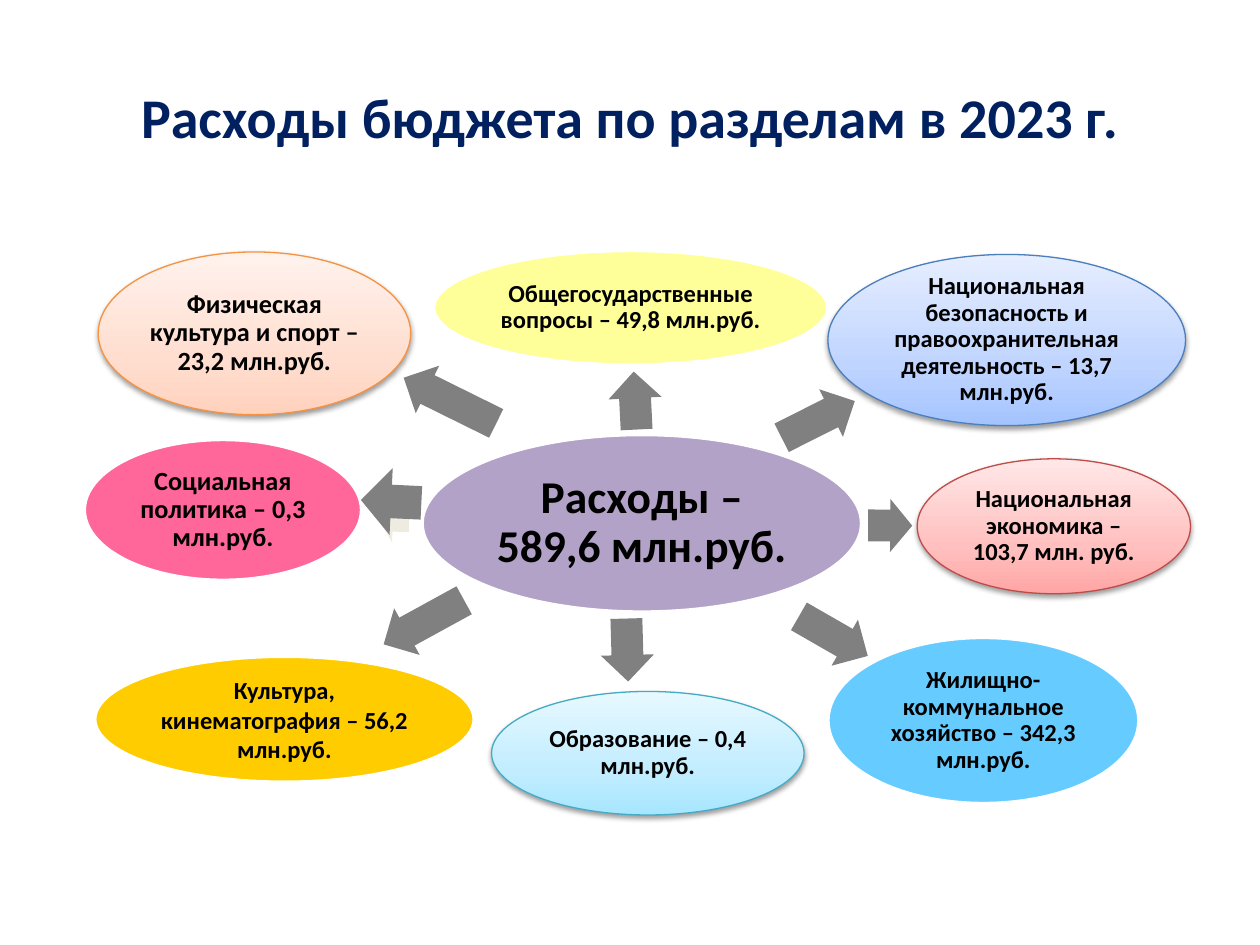
from lxml import etree
from pptx import Presentation, util as u
from pptx.dml.color import RGBColor
from pptx.enum import shapes, text
from pptx.oxml.ns import nsdecls

GREY = "808080"
SHADOW = """<a:effectLst %s><a:outerShdw blurRad="39370" dist="20320" dir="5400000"
 rotWithShape="0"><a:srgbClr val="000000"><a:alpha val="38000"/></a:srgbClr>
</a:outerShdw></a:effectLst>""" % nsdecls("a")


def rgb(code):
    return RGBColor.from_string(code)


def fade(shape, stops):
    """Fill with three colours that run from the bottom to the top."""
    marks = "".join(
        f'<a:gs pos="{pos}"><a:srgbClr val="{code}"/></a:gs>'
        for pos, code in zip((0, 35000, 100000), stops))
    grad = etree.fromstring(
        f'<a:gradFill {nsdecls("a")} rotWithShape="1"><a:gsLst>{marks}</a:gsLst>'
        '<a:lin ang="16200000" scaled="0"/></a:gradFill>')
    shape.fill.background()
    props = shape._element.spPr
    props.replace(props.find("{*}noFill"), grad)


class Deck:
    font = "Calibri"

    def __init__(self):
        self.file = Presentation()
        self.file.slide_width, self.file.slide_height = u.Cm(25.4), u.Cm(19.05)
        self.slide = self.file.slides.add_slide(self.file.slide_layouts[5])

    def label(self, frame, words, size, color, space=None):
        frame.text = words
        frame.word_wrap = True
        frame.vertical_anchor = text.MSO_ANCHOR.MIDDLE
        for para in frame.paragraphs:
            para.alignment = text.PP_ALIGN.CENTER
            para.line_spacing = space
            for run in para.runs:
                font = run.font
                font.name, font.size, font.bold = self.font, u.Pt(size), True
                font.color.rgb = rgb(color)

    def title(self, words, box):
        head = self.slide.shapes.title
        head.left, head.top, head.width, head.height = map(u.Cm, box)
        self.label(head.text_frame, words, 32, "002060")

    def shape(self, kind, box):
        item = self.slide.shapes.add_shape(kind, *map(u.Cm, box))
        item.shadow.inherit = False
        return item

    def oval(self, words, box, fill, edge=None, size=14, space=0.9, inset=0.05):
        """An edge colour goes with a gradient fill and a shadow."""
        item = self.shape(shapes.MSO_SHAPE.OVAL, box)
        if edge:
            fade(item, fill)
            props = item._element.spPr
            props.replace(props.find("{*}effectLst"), etree.fromstring(SHADOW))
        else:
            item.fill.solid()
            item.fill.fore_color.rgb = rgb(fill)
        item.line.color.rgb = rgb(edge or "FFFFFF")
        item.line.width = u.Pt(0.75 if edge else 2)
        frame = item.text_frame
        frame.margin_left = frame.margin_right = u.Cm(inset)
        frame.margin_top = frame.margin_bottom = u.Cm(inset)
        self.label(frame, words, size, "000000", space)

    def arrow(self, left, top, width, turn, fill=GREY, high=1.07,
              kind=shapes.MSO_SHAPE.RIGHT_ARROW, head=(0.6, 0.5)):
        item = self.shape(kind, (left, top, width, high))
        item.adjustments[0], item.adjustments[1] = head
        item.rotation = turn
        item.fill.solid()
        item.fill.fore_color.rgb = rgb(fill)
        item.line.fill.background()


# Each part: arrow (left, top, width, turn[, fill]), then the oval it points to
PARTS = [
    ((12.22, 7.54, 1.17, 267.1),
     dict(words="Общегосударственные вопросы – 49,8 млн.руб.",
          box=(8.74, 5.05, 7.95, 2.31), fill="FFFF99")),
    ((15.67, 7.92, 1.65, 333.3),
     dict(words="Национальная безопасность и правоохранительная "
                "деятельность – 13,7 млн.руб.",
          box=(16.69, 5.13, 7.21, 3.45),
          fill=("A4C4FF", "BFD4FF", "E6EEFF"), edge="4B7EBC")),
    ((17.5, 10.06, 0.89, 0.4),
     dict(words="Национальная экономика – 103,7 млн. руб.",
          box=(18.49, 9.25, 5.51, 2.72),
          fill=("FFA6A5", "FFC0BF", "FFE7E7"), edge="BF4C48")),
    ((16, 12.29, 1.6, 29.9),
     dict(words="Жилищно-коммунальное хозяйство – 342,3 млн.руб.",
          box=(16.69, 12.85, 6.27, 3.35), fill="66CCFF")),
    ((7.62, 12.01, 1.85, 151.3),
     dict(words="Культура,\nкинематография – 56,2 млн.руб.",
          box=(1.91, 13.23, 7.65, 2.54), fill="FFCC00", space=None)),
    ((7.59, 9.86, 0.66, 181.8, "EEECE1"),
     dict(words="Социальная политика – 0,3 млн.руб.",
          box=(1.7, 8.86, 5.59, 2.84), fill="FF6699", size=15)),
    ((8.03, 7.54, 2.08, 206.3),
     dict(words="Физическая культура и спорт – 23,2 млн.руб.",
          box=(1.98, 5.08, 6.3, 3.28),
          fill=("FFD2BD", "FFDED0", "FFF2ED"), edge="F69240", size=15)),
    ((12.01, 12.57, 1.27, 88.4),
     dict(words="Образование – 0,4 млн.руб.",
          box=(9.91, 13.94, 6.3, 2.49),
          fill=("A7E6FF", "C1EDFF", "E7F8FF"), edge="46AAC5")),
]


def main():
    deck = Deck()
    deck.title("Расходы бюджета по разделам в 2023 г.", (1.27, 0.76, 22.86, 3.18))
    deck.oval("Расходы – 589,6 млн.руб.", (8.51, 8.76, 8.86, 3.58), "B3A2C7",
              size=26, inset=0.1)
    for arrow, oval in PARTS:
        deck.arrow(*arrow)
        deck.oval(**oval)
    deck.arrow(7.21, 9.5, 1.35, 92.7, high=1.22,
               kind=shapes.MSO_SHAPE.DOWN_ARROW, head=(0.5, 0.5))
    deck.file.save("out.pptx")


if __name__ == "__main__":
    main()
